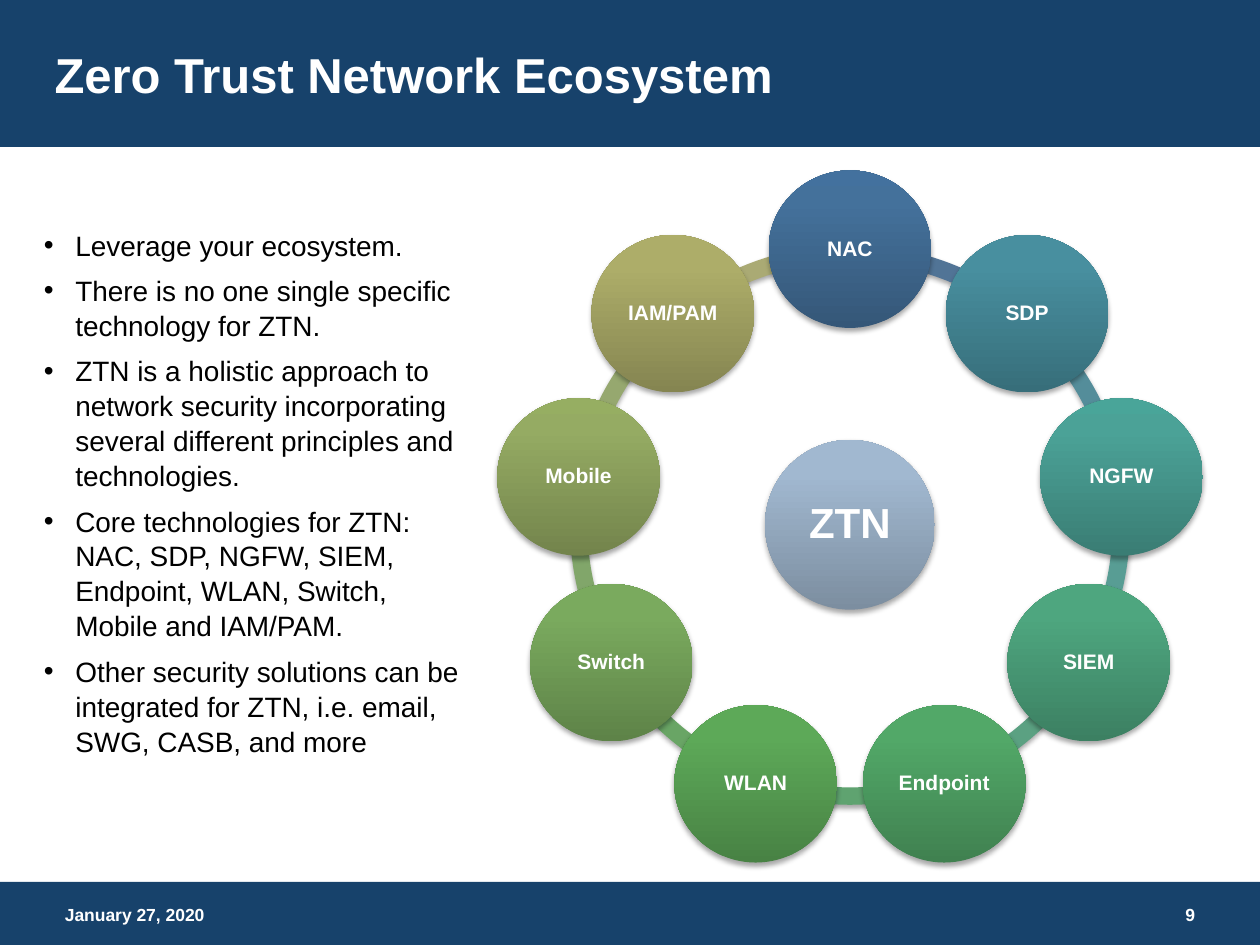
from copy import deepcopy
from math import cos, radians, sin

from lxml import etree
from pptx import Presentation
from pptx.dml.color import RGBColor
from pptx.enum.shapes import MSO_SHAPE as Shape
from pptx.enum.text import MSO_ANCHOR as Anchor, PP_ALIGN as Align
from pptx.oxml import parse_xml
from pptx.oxml.ns import nsdecls, qn
from pptx.util import Pt

TITLE = "Zero Trust Network Ecosystem"
DATE = "January 27, 2020"
PAGE = "9"
BULLETS = [
    "Leverage your ecosystem.",
    "There is no one single specific technology for ZTN.",
    "ZTN is a holistic approach to network security incorporating several "
    "different principles and technologies.",
    "Core technologies for ZTN: NAC, SDP, NGFW, SIEM, Endpoint, WLAN, Switch, "
    "Mobile and IAM/PAM.",
    "Other security solutions can be integrated for ZTN, i.e. email, SWG, "
    "CASB, and more",
]
HUB = ("ZTN", ("7C8EA0", "A1B8D0", "A1B9D2"))
TECHNOLOGIES = [
    ("NAC", ("355778", "44719B", "43719E"), "517496"),
    ("SDP", ("376E7A", "488F9F", "4691A1"), "548D9A"),
    ("NGFW", ("3A7D74", "4BA297", "49A599"), "589D94"),
    ("SIEM", ("3C8062", "4EA67F", "4DA880"), "5BA182"),
    ("Endpoint", ("408150", "52A868", "51AA67"), "5FA370"),
    ("WLAN", ("488244", "5DA958", "5CAB57"), "69A565"),
    ("Switch", ("5E8348", "7AAA5E", "7BAC5D"), "81A66A"),
    ("Mobile", ("73844C", "95AB63", "96AE62"), "96A86F"),
    ("IAM/PAM", ("858551", "ADAD69", "AFAF68"), "AAAA74"),
]
NAVY, WHITE, BLACK = "17426B", "FFFFFF", "000000"
WIDTH, HEIGHT = 720, 540
HEADER_HEIGHT, FOOTER_HEIGHT = 84, 36
CENTER_X, CENTER_Y = 485.7, 299.9
RING_SIZE, RING_THICKNESS = 320, 0.031
ORBIT = 157.5
NODE_WIDTH, NODE_HEIGHT, HUB_SIZE = 93, 90, 97
GRADIENT_POSITIONS = (0, 0.8, 1)


def color(value):
    return RGBColor.from_string(value)


def style_paragraph(paragraph, size, value, bold=False, align=None):
    paragraph.alignment = align
    font = paragraph.font
    font.name, font.size, font.bold = "Arial", Pt(size), bold
    font.color.rgb = color(value)


def add_plain_shape(slide, kind, left, top, width, height):
    shape = slide.shapes.add_shape(kind, Pt(left), Pt(top), Pt(width), Pt(height))
    shape.shadow.inherit = False
    shape.line.fill.background()
    return shape


def add_centered(slide, kind, x, y, width, height):
    shape = add_plain_shape(slide, kind, x - width / 2, y - height / 2, width, height)
    effects = shape._element.spPr.find(qn("a:effectLst"))
    effects.append(parse_xml(
        f'<a:outerShdw {nsdecls("a")} blurRad="{Pt(3.1)}" dist="{Pt(1.8)}" '
        'dir="5400000" rotWithShape="0"><a:srgbClr val="000000">'
        '<a:alpha val="35000"/></a:srgbClr></a:outerShdw>'))
    return shape


def add_band(slide, top, height):
    band = add_plain_shape(slide, Shape.RECTANGLE, 0, top, WIDTH, height)
    band.fill.solid()
    band.fill.fore_color.rgb = color(NAVY)


def add_circle(slide, text, colors, x, y, width, height, size):
    circle = add_centered(slide, Shape.OVAL, x, y, width, height)
    fill = circle.fill
    fill.gradient()
    fill.gradient_angle = 90
    stops = circle._element.spPr.find(qn("a:gradFill")).find(qn("a:gsLst"))
    stops.append(deepcopy(stops[-1]))
    for stop, position, value in zip(fill.gradient_stops, GRADIENT_POSITIONS, colors):
        stop.position = position
        stop.color.rgb = color(value)
    frame = circle.text_frame
    frame.margin_left = frame.margin_right = Pt(2)
    frame.margin_top = frame.margin_bottom = Pt(2)
    frame.vertical_anchor = Anchor.MIDDLE
    frame.text = text
    paragraph = frame.paragraphs[0]
    paragraph.line_spacing = 0.9
    style_paragraph(paragraph, size, WHITE, True, Align.CENTER)


def add_text_box(slide, left, top, width, height):
    frame = slide.shapes.add_textbox(Pt(left), Pt(top), Pt(width), Pt(height)).text_frame
    frame.word_wrap = True
    return frame


def add_footer_text(slide, text, left, width, align):
    frame = add_text_box(slide, left, 505.5, width, 34.5)
    frame.vertical_anchor = Anchor.MIDDLE
    frame.text = text
    style_paragraph(frame.paragraphs[0], 10, WHITE, True, align)


def add_title(slide):
    title = slide.shapes.title
    slide.shapes._spTree.append(title._element)
    title.left, title.top = Pt(24), Pt(0)
    title.width, title.height = Pt(672), Pt(HEADER_HEIGHT)
    title.text_frame.text = TITLE
    title.text_frame.vertical_anchor = Anchor.MIDDLE
    style_paragraph(title.text_frame.paragraphs[0], 28, WHITE, True, Align.LEFT)


def add_bullets(slide):
    frame = add_text_box(slide, 18, 126, 258, 348)
    for index, text in enumerate(BULLETS):
        paragraph = frame.add_paragraph() if index else frame.paragraphs[0]
        paragraph.text = text
        paragraph.line_spacing = 1.04
        paragraph.space_before = Pt(6 if index else 0)
        properties = paragraph._p.get_or_add_pPr()
        properties.set("marL", str(Pt(18)))
        properties.set("indent", str(-Pt(18)))
        etree.SubElement(properties, qn("a:buFont"), typeface="Arial")
        etree.SubElement(properties, qn("a:buChar"), char="•")
        style_paragraph(paragraph, 16, BLACK)


def add_ecosystem(slide):
    step = 360 / len(TECHNOLOGIES)
    angles = [270 + step * index for index in range(len(TECHNOLOGIES))]
    for angle, (_, _, arc_color) in zip(angles, TECHNOLOGIES):
        arc = add_centered(slide, Shape.BLOCK_ARC, CENTER_X, CENTER_Y, RING_SIZE, RING_SIZE)
        arc.adjustments[0] = angle % 360 * 0.6
        arc.adjustments[1] = (angle + step) % 360 * 0.6
        arc.adjustments[2] = RING_THICKNESS
        arc.fill.solid()
        arc.fill.fore_color.rgb = color(arc_color)
    add_circle(slide, *HUB, CENTER_X, CENTER_Y, HUB_SIZE, HUB_SIZE, 24)
    for angle, (name, colors, _) in zip(angles, TECHNOLOGIES):
        x = CENTER_X + ORBIT * cos(radians(angle))
        y = CENTER_Y + ORBIT * sin(radians(angle))
        add_circle(slide, name, colors, x, y, NODE_WIDTH, NODE_HEIGHT, 12)


def main():
    presentation = Presentation()
    presentation.slide_width, presentation.slide_height = Pt(WIDTH), Pt(HEIGHT)
    slide = presentation.slides.add_slide(presentation.slide_layouts[5])
    add_band(slide, HEIGHT - FOOTER_HEIGHT, FOOTER_HEIGHT)
    add_band(slide, 0, HEADER_HEIGHT)
    add_footer_text(slide, DATE, 30, 174, Align.LEFT)
    add_footer_text(slide, PAGE, 528, 162, Align.RIGHT)
    add_ecosystem(slide)
    add_title(slide)
    add_bullets(slide)
    presentation.save("out.pptx")


if __name__ == "__main__":
    main()
